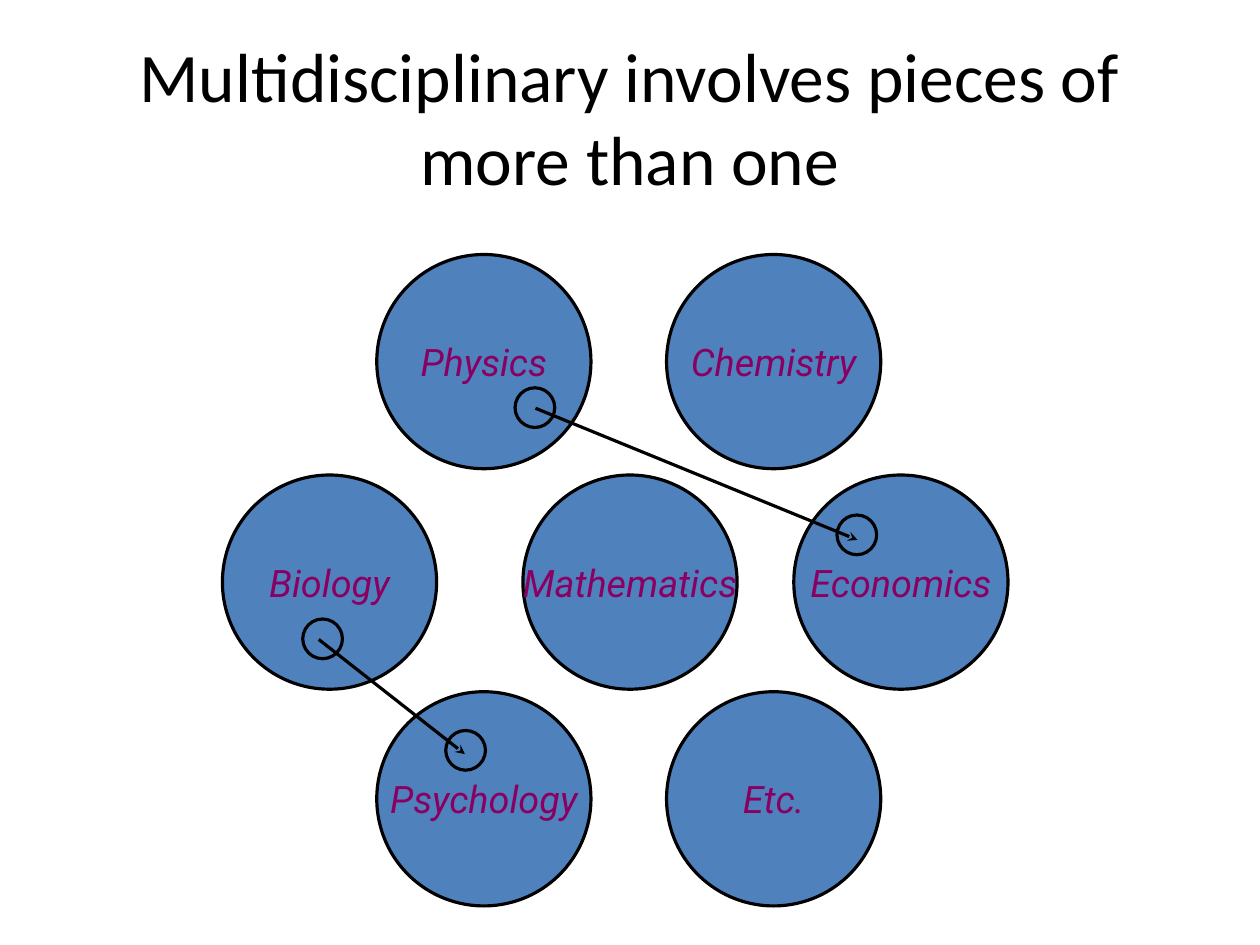
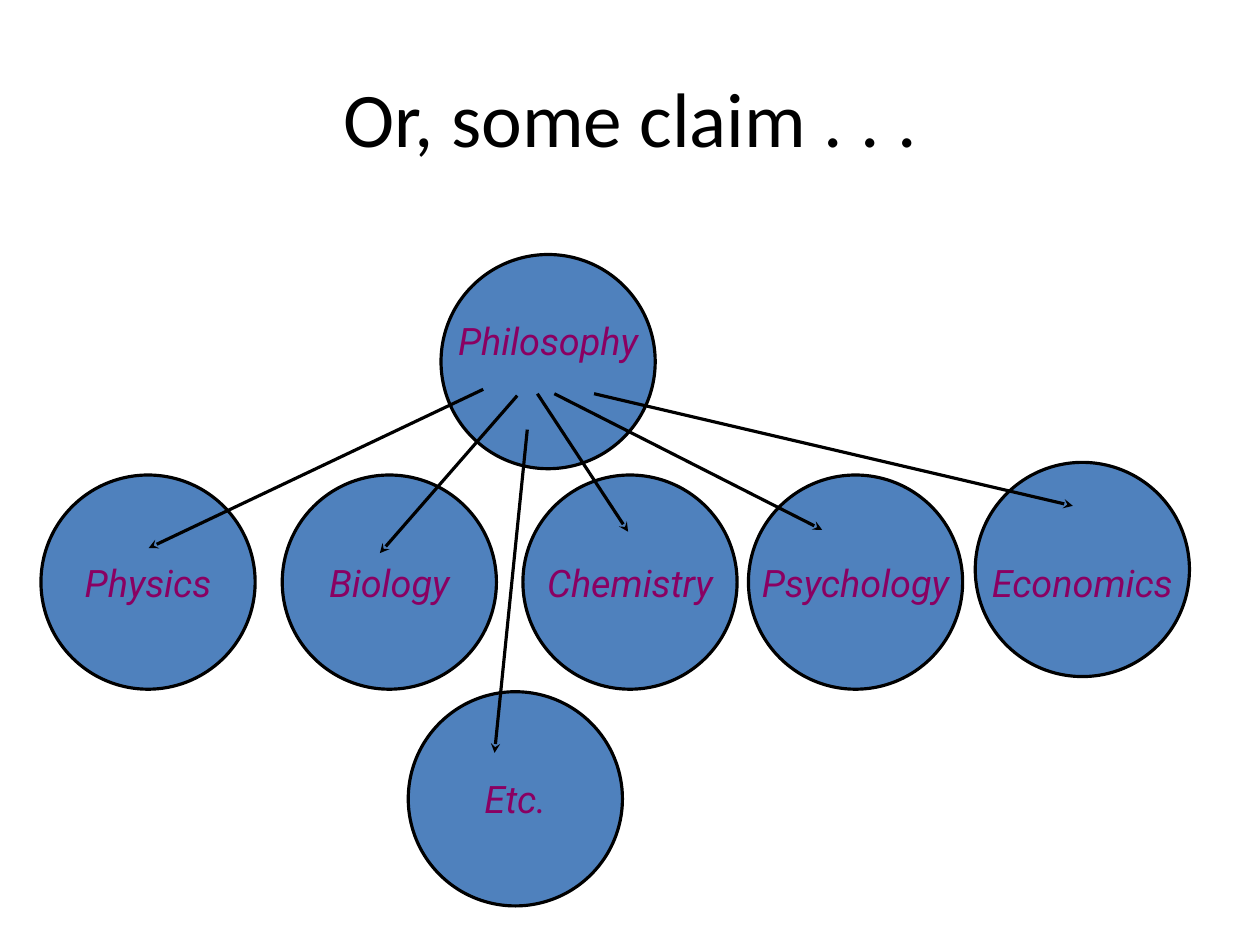
from pptx import Presentation
from pptx import util as u
from pptx.dml.color import RGBColor
from pptx.enum import shapes, text
from pptx.oxml import parse_xml
from pptx.oxml.ns import nsdecls

# Shared look; the slide is a grid of 100 columns by 75 rows
WIDTH, HEIGHT = u.Inches(11.11), u.Inches(8.33)
COLUMN, ROW = WIDTH / 100, HEIGHT / 75
BLACK, BLUE, PLUM = "000000", "4F81BD", "8A0062"
STROKE = u.Pt(2)
DISC, PIECE = 17, 3.15
TOP, MIDDLE, BOTTOM = 28.7, 46.2, 63.4


def color(value):
    return RGBColor.from_string(value)


def across(columns):
    return round(columns * COLUMN)


def down(rows):
    return round(rows * ROW)


def write(shape, words, *, size, font, ink, italic=False, wrap=True,
          insets=(0, 0, 0, 0)):
    frame = shape.text_frame
    frame.word_wrap = wrap
    frame.vertical_anchor = text.MSO_ANCHOR.MIDDLE
    frame.margin_left, frame.margin_top, frame.margin_right, frame.margin_bottom = insets
    paragraph = frame.paragraphs[0]
    paragraph.alignment = text.PP_ALIGN.CENTER
    run = paragraph.add_run()
    run.text = words
    run.font.size, run.font.name = u.Pt(size), font
    run.font.italic = italic
    run.font.color.rgb = color(ink)


def add_slide(deck, title, size):
    slide = deck.slides.add_slide(deck.slide_layouts[6])
    heading = slide.shapes.add_textbox(across(5), down(3), across(90), down(12.5))
    side, edge = u.Inches(0.11), u.Inches(0.06)
    write(heading, title, size=size, font="Calibri", ink=BLACK,
          insets=(side, edge, side, edge))
    return slide


def add_circle(slide, x, y, diameter):
    """Draw a circle centred on column x, row y."""
    circle = slide.shapes.add_shape(
        shapes.MSO_SHAPE.OVAL, across(x - diameter / 2), down(y - diameter / 2),
        across(diameter), down(diameter))
    circle.shadow.inherit = False
    circle.fill.solid()
    circle.fill.fore_color.rgb = color(BLUE)
    circle.line.color.rgb = color(BLACK)
    circle.line.width = STROKE
    return circle


def add_discipline(slide, name, x, y, lowered=0):
    """Draw a labelled disc; lowered moves the label by that many rows."""
    insets = (0, down(max(2 * lowered, 0)), 0, down(max(-2 * lowered, 0)))
    write(add_circle(slide, x, y, DISC), name, size=24, font="Roboto", ink=PLUM,
          italic=True, wrap=False, insets=insets)


def add_arrow(slide, start, end):
    arrow = slide.shapes.add_connector(
        shapes.MSO_CONNECTOR.STRAIGHT, across(start[0]), down(start[1]),
        across(end[0]), down(end[1]))
    arrow.line.color.rgb = color(BLACK)
    arrow.line.width = STROKE
    arrow.line._get_or_add_ln().append(
        parse_xml(f'<a:tailEnd {nsdecls("a")} type="stealth"/>'))
    arrow._element.spPr.append(parse_xml(f'<a:effectLst {nsdecls("a")}/>'))


def add_multidisciplinary(deck):
    slide = add_slide(deck, "Multidisciplinary involves pieces of more than one", 44.1)
    disciplines = [
        ("Physics", 38.4, TOP), ("Chemistry", 61.4, TOP),
        ("Biology", 26.15, MIDDLE), ("Mathematics", 50, MIDDLE),
        ("Economics", 71.5, MIDDLE),
        ("Psychology", 38.4, BOTTOM), ("Etc.", 61.4, BOTTOM),
    ]
    for discipline in disciplines:
        add_discipline(slide, *discipline)

    # Pieces of two disciplines, and the arrow that links them
    links = [
        ((42.45, 32.35), (68, 42.45), (42.5, 32.4), (68.05, 42.85)),
        ((25.6, 50.7), (36.95, 59.55), (25.3, 50.75), (36.9, 59.85)),
    ]
    for source, target, start, end in links:
        for piece in (source, target):
            add_circle(slide, *piece, PIECE)
        add_arrow(slide, start, end)


def add_claim(deck):
    slide = add_slide(deck, "Or, some claim . . .", 49)
    disciplines = [
        ("Philosophy", 43.5, TOP, -1.7),
        ("Physics", 11.75, MIDDLE), ("Biology", 30.9, MIDDLE),
        ("Chemistry", 50, MIDDLE), ("Psychology", 67.9, MIDDLE),
        ("Economics", 85.9, MIDDLE - 1, 1),
        ("Etc.", 40.9, BOTTOM),
    ]
    for discipline in disciplines:
        add_discipline(slide, *discipline)

    # Arrows from philosophy to every other discipline
    arrows = [
        ((38.35, 30.9), (11.8, 43.5)), ((41.05, 31.4), (30.15, 43.9)),
        ((42.65, 31.25), (49.85, 42.2)), ((44, 31.25), (65.25, 42.05)),
        ((47.15, 31.25), (85.15, 40.15)), ((41.85, 34.1), (39.25, 59.75)),
    ]
    for start, end in arrows:
        add_arrow(slide, start, end)


def main():
    deck = Presentation()
    deck.slide_width, deck.slide_height = WIDTH, HEIGHT
    add_multidisciplinary(deck)
    add_claim(deck)
    deck.save("out.pptx")


if __name__ == "__main__":
    main()
